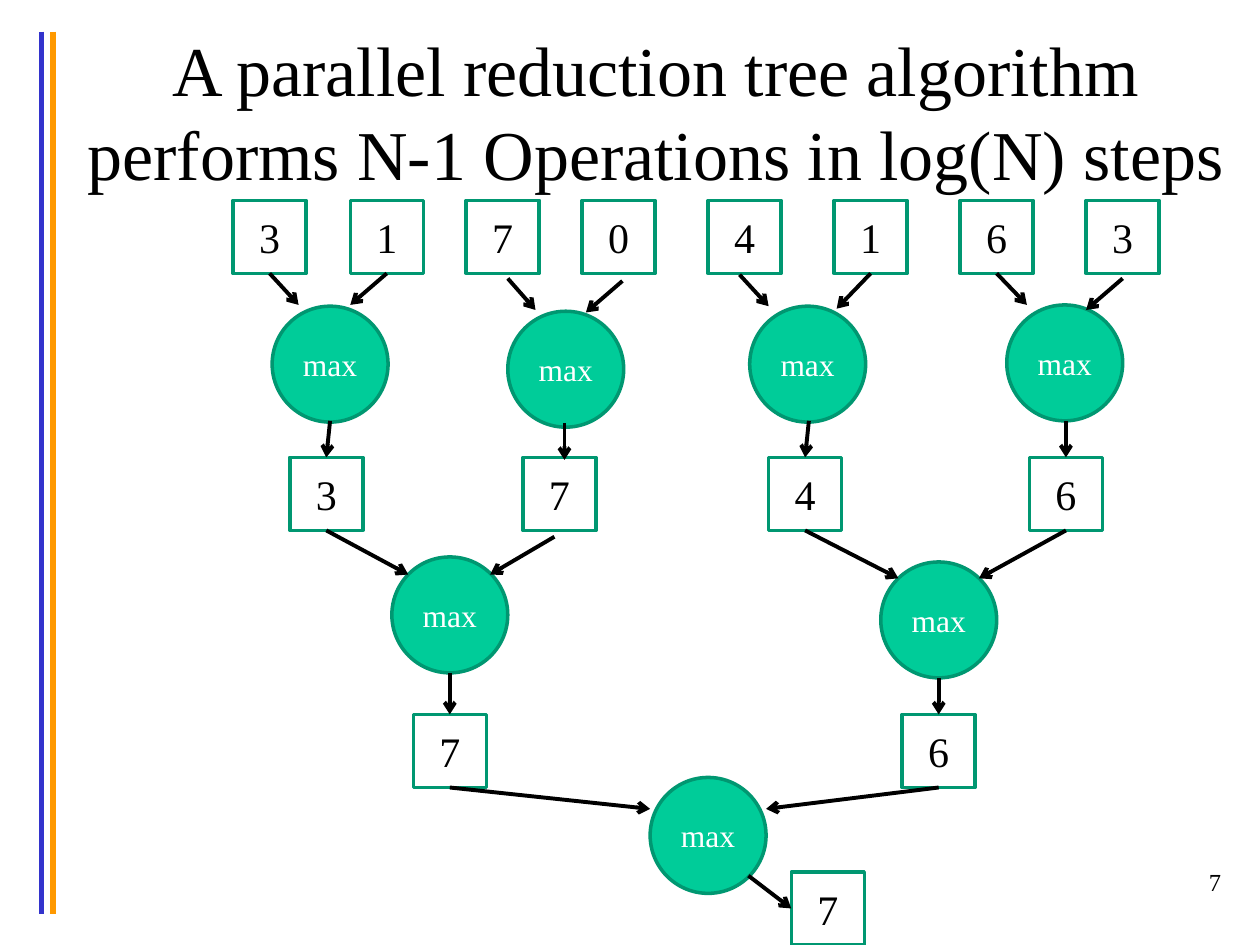
from pptx import Presentation
from pptx.dml.color import RGBColor
from pptx.enum.shapes import MSO_CONNECTOR, MSO_SHAPE
from pptx.enum.text import MSO_ANCHOR as Anchor, MSO_AUTO_SIZE as AutoSize, PP_ALIGN as Align
from pptx.oxml.ns import qn
from pptx.util import Inches, Pt
from lxml.etree import SubElement

COLORS = {"blue": "3333CC", "orange": "FF9900", "black": "000000",
          "white": "FFFFFF", "edge": "009771", "green": "00CC99"}

prs = Presentation()
prs.slide_width, prs.slide_height = Inches(10), Inches(7.5)
col, row = prs.slide_width / 10, prs.slide_height / 7.5
slide = prs.slides.add_slide(prs.slide_layouts[5])
shapes = slide.shapes


def write(shape, text, size, color, align=Align.CENTER, anchor=Anchor.MIDDLE):
    frame = shape.text_frame
    frame.text = text
    frame.word_wrap = True
    frame.auto_size = AutoSize.NONE
    frame.vertical_anchor = anchor
    frame.paragraphs[0].alignment = align
    font = frame.paragraphs[0].runs[0].font
    font.name, font.size = "Times New Roman", Pt(size)
    font.color.rgb = RGBColor.from_string(COLORS[color])


def add_line(x1, y1, x2, y2, color, width):
    line = shapes.add_connector(MSO_CONNECTOR.STRAIGHT, int(x1 * col), int(y1 * row),
                                int(x2 * col), int(y2 * row))
    line.line.color.rgb = RGBColor.from_string(COLORS[color])
    line.line.width = Pt(width)
    SubElement(line._element.spPr, qn("a:effectLst"))
    return line


# Side rules, title and page number
for x, color in ((0.33, "blue"), (0.42, "orange")):
    add_line(x, 0.25, x, 7.25, color, 3)

title = shapes.title
title.left, title.top = int(0.58 * col), int(0.25 * row)
title.width, title.height = int(9.25 * col), int(1.25 * row)
write(title, "A parallel reduction tree algorithm performs N-1 Operations in log(N) steps",
      40, "black")

page_number = shapes.add_textbox(int(7.71 * col), int(6.83 * row), int(2.08 * col), int(0.5 * row))
write(page_number, "7", 14, "black", Align.RIGHT, Anchor.TOP)

# Tree nodes: values in squares, operations in circles
SQUARE, CIRCLE = 0.58, 0.92
levels = [
    (1.59, zip((1.85, 2.78, 3.7, 4.62, 5.62, 6.62, 7.62, 8.62), "31704163")),
    (3.63, zip((2.3, 4.15, 6.1, 8.17), "3746")),
    (5.67, zip((3.28, 7.16), "76")),
    (6.92, [(6.28, "7")]),
]
values = [(left, top, text) for top, level in levels for left, text in level]
operations = [(2.16, 2.43), (4.03, 2.47), (5.95, 2.43), (7.99, 2.42),
              (3.11, 4.42), (6.99, 4.46), (5.16, 6.17)]
nodes = [(MSO_SHAPE.RECTANGLE, SQUARE, *value, 24, "black") for value in values]
nodes += [(MSO_SHAPE.OVAL, CIRCLE, *place, "max", 18, "white") for place in operations]

joints = []
for kind, side, left, top, text, size, color in nodes:
    node = shapes.add_shape(kind, int(left * col), int(top * row), int(side * col), int(side * row))
    node.shadow.inherit = False
    node.line.color.rgb = RGBColor.from_string(COLORS["edge"])
    node.line.width = Pt(2)
    write(node, text, size, color)
    if kind == MSO_SHAPE.OVAL:
        node.fill.solid()
        node.fill.fore_color.rgb = RGBColor.from_string(COLORS["green"])
    else:
        node.fill.background()
        half = side / 2
        joints += [(left + half, top, node, 0), (left, top + half, node, 1),
                   (left + half, top + side, node, 2), (left + side, top + half, node, 3)]

# Arrows, joined to a square wherever they meet the middle of its side
arrows = [
    (2.14, 2.17, 2.37, 2.42), (3.08, 2.17, 2.78, 2.42),
    (4.03, 2.21, 4.25, 2.46), (4.94, 2.23, 4.65, 2.48),
    (5.87, 2.18, 6.1, 2.43), (6.93, 2.2, 6.64, 2.45),
    (7.93, 2.17, 8.15, 2.42), (8.91, 2.21, 8.62, 2.46),
    (2.62, 3.34, 2.62, 3.63), (4.48, 3.36, 4.48, 3.65),
    (6.42, 3.34, 6.42, 3.63), (8.46, 3.34, 8.46, 3.63),
    (2.62, 4.21, 3.24, 4.56), (4.4, 4.26, 3.89, 4.56),
    (6.39, 4.21, 7.13, 4.59), (8.46, 4.21, 7.77, 4.59),
    (3.57, 5.34, 3.57, 5.67), (7.45, 5.38, 7.45, 5.67),
    (3.57, 6.26, 5.16, 6.42), (7.45, 6.26, 6.08, 6.42),
    (5.94, 6.95, 6.28, 7.21),
]
NEAR = 0.035
for x1, y1, x2, y2 in arrows:
    arrow = add_line(x1, y1, x2, y2, "black", 2.25)
    SubElement(arrow.line._get_or_add_ln(), qn("a:tailEnd"), type="arrow")
    for x, y, node, site in joints:
        if abs(x - x1) < NEAR and abs(y - y1) < NEAR:
            arrow.begin_connect(node, site)
        if abs(x - x2) < NEAR and abs(y - y2) < NEAR:
            arrow.end_connect(node, site)

prs.save("out.pptx")
